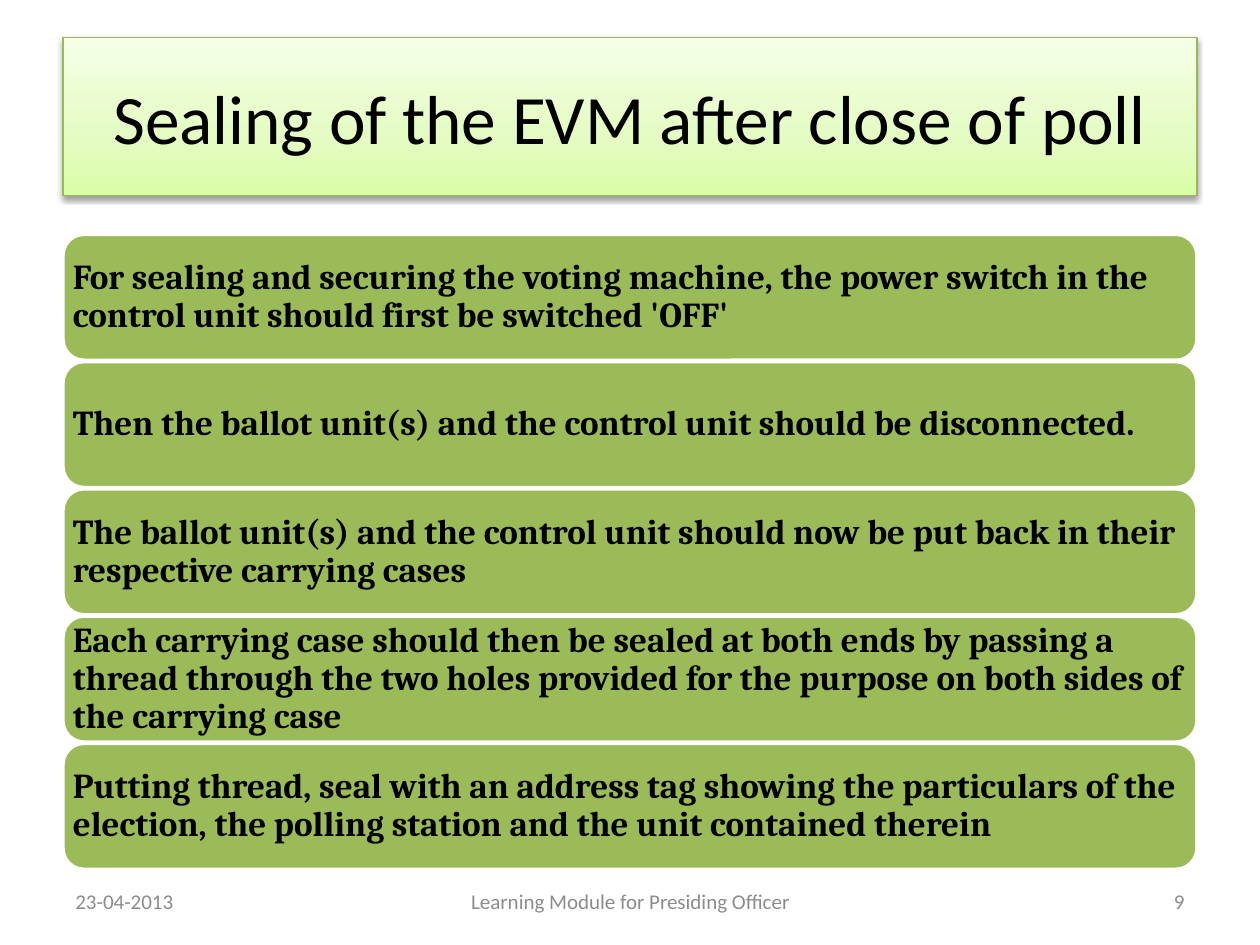
from lxml.etree import SubElement
from pptx import Presentation
from pptx.dml.color import RGBColor
from pptx.enum.shapes import MSO_SHAPE
from pptx.enum.text import MSO_ANCHOR, PP_ALIGN
from pptx.oxml.ns import qn
from pptx.util import Inches, Pt

BLACK = RGBColor(0x00, 0x00, 0x00)
WHITE = RGBColor(0xFF, 0xFF, 0xFF)
GREEN = RGBColor(0x9B, 0xBB, 0x59)
TITLE_LINE = RGBColor(0x98, 0xB9, 0x55)
FOOTER_GRAY = RGBColor(0x8C, 0x8C, 0x8C)
TITLE_STOPS = [
    (0, RGBColor(0xDA, 0xFD, 0xA7)),
    (35, RGBColor(0xE4, 0xFC, 0xC2)),
    (100, RGBColor(0xF5, 0xFF, 0xE7)),
]

SLIDE_WIDTH, SLIDE_HEIGHT = 10, 7.5
MARGIN = 0.05 * SLIDE_WIDTH
CONTENT_WIDTH = SLIDE_WIDTH - 2 * MARGIN
STEP_TOP, STEP_HEIGHT, STEP_PITCH = 1.86, 1, 1.01
FOOTER_TOP, FOOTER_HEIGHT = 6.95, 0.4

TITLE = "Sealing of the EVM after close of poll"
STEPS = [
    "For sealing and securing the voting machine, the power switch in the "
    "control unit should first be switched 'OFF'",
    "Then the ballot unit(s) and the control unit should be disconnected.",
    "The ballot unit(s) and the control unit should now be put back in their "
    "respective carrying cases",
    "Each carrying case should then be sealed at both ends by passing a thread "
    "through the two holes provided for the purpose on both sides of the carrying case",
    "Putting thread, seal with an address tag showing the particulars of the "
    "election, the polling station and the unit contained therein",
]
FOOTERS = [
    ("23-04-2013", MARGIN, 2.33, PP_ALIGN.LEFT),
    ("Learning Module for Presiding Officer", 3.42, 3.17, PP_ALIGN.CENTER),
    ("9", 7.17, 2.33, PP_ALIGN.RIGHT),
]


def write_text(box, text, size, font="Calibri", color=BLACK, bold=False,
               align=PP_ALIGN.LEFT, spacing=None, inset=None):
    frame = box.text_frame
    frame.word_wrap = True
    frame.vertical_anchor = MSO_ANCHOR.MIDDLE
    if inset is not None:
        frame.margin_left = frame.margin_right = Inches(inset)
        frame.margin_top = frame.margin_bottom = Inches(inset)
    para = frame.paragraphs[0]
    para.alignment = align
    para.line_spacing = spacing
    span = para.add_run()
    span.text = text
    span.font.size = Pt(size)
    span.font.name = font
    span.font.bold = bold
    span.font.color.rgb = color


def add_panel(page, kind, top, height, line_color, line_width):
    panel = page.shapes.add_shape(
        kind, Inches(MARGIN), Inches(top), Inches(CONTENT_WIDTH), Inches(height))
    panel.shadow.inherit = False
    panel.line.color.rgb = line_color
    panel.line.width = Pt(line_width)
    return panel


def fill_gradient(shape, stops, angle):
    shape.fill.gradient()
    shape.fill.gradient_angle = 360 - angle  # python-pptx counts counter-clockwise
    stop_list = shape.element.spPr.find(".//" + qn("a:gsLst"))
    for old_stop in list(stop_list):
        stop_list.remove(old_stop)
    for position, color in stops:
        stop = SubElement(stop_list, qn("a:gs"), pos=str(position * 1000))
        SubElement(stop, qn("a:srgbClr"), val=str(color))


def add_shadow(shape, blur, distance, direction, opacity):
    effects = shape.element.spPr.find(qn("a:effectLst"))
    shadow = SubElement(
        effects, qn("a:outerShdw"), blurRad=str(Pt(blur)), dist=str(Pt(distance)),
        dir=str(direction * 60000), rotWithShape="0")
    color = SubElement(shadow, qn("a:srgbClr"), val=str(BLACK))
    SubElement(color, qn("a:alpha"), val=str(opacity * 1000))


def add_title(page):
    panel = add_panel(page, MSO_SHAPE.RECTANGLE, 0.04 * SLIDE_HEIGHT, 1.25,
                      TITLE_LINE, 0.75)
    fill_gradient(panel, TITLE_STOPS, 270)
    add_shadow(panel, blur=3.1, distance=1.6, direction=90, opacity=38)
    write_text(panel, TITLE, 39.6, align=PP_ALIGN.CENTER)


def add_step(page, row, text):
    panel = add_panel(page, MSO_SHAPE.ROUNDED_RECTANGLE, STEP_TOP + row * STEP_PITCH,
                      STEP_HEIGHT, WHITE, 2)
    panel.fill.solid()
    panel.fill.fore_color.rgb = GREEN
    write_text(panel, text, 20, font="Cambria", bold=True, spacing=0.9, inset=0.03)


def add_footer(page, text, left, width, align):
    box = page.shapes.add_textbox(
        Inches(left), Inches(FOOTER_TOP), Inches(width), Inches(FOOTER_HEIGHT))
    write_text(box, text, 12, color=FOOTER_GRAY, align=align)


def main():
    deck = Presentation()
    deck.slide_width = Inches(SLIDE_WIDTH)
    deck.slide_height = Inches(SLIDE_HEIGHT)
    page = deck.slides.add_slide(deck.slide_layouts[6])
    add_title(page)
    for row, text in enumerate(STEPS):
        add_step(page, row, text)
    for footer in FOOTERS:
        add_footer(page, *footer)
    deck.save("out.pptx")


if __name__ == "__main__":
    main()
